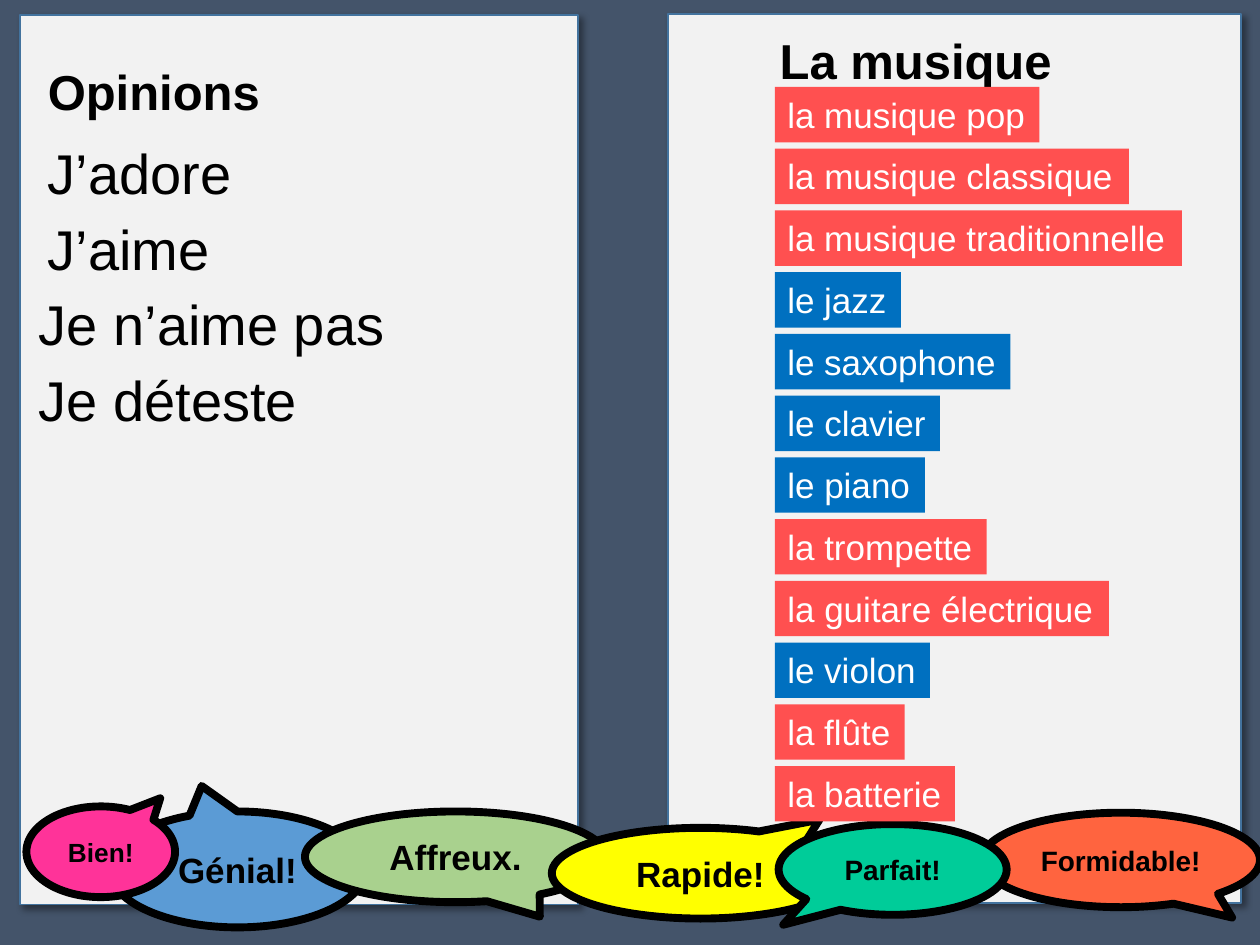
from lxml import etree
from pptx import Presentation
from pptx.dml.color import RGBColor
from pptx.enum.shapes import MSO_SHAPE
from pptx.enum.text import MSO_ANCHOR, MSO_AUTO_SIZE, PP_ALIGN
from pptx.oxml import parse_xml
from pptx.oxml.ns import nsdecls, qn
from pptx.util import Inches, Pt

RECT = MSO_SHAPE.RECTANGLE
BUBBLE = MSO_SHAPE.OVAL_CALLOUT
TOP, MIDDLE = MSO_ANCHOR.TOP, MSO_ANCHOR.MIDDLE
LEFT, CENTER = PP_ALIGN.LEFT, PP_ALIGN.CENTER
GROW = MSO_AUTO_SIZE.SHAPE_TO_FIT_TEXT

COLORS = {
    "back": "44546A", "panel": "F2F2F2", "edge": "43739E",
    "black": "000000", "white": "FFFFFF",
    "la": "FF5050", "le": "0070C0",
    "blue": "5B9BD5", "pink": "FF3399", "green": "A9D18E",
    "yellow": "FFFF00", "orange": "FF643F", "teal": "00CC99",
}


def color(name):
    return RGBColor.from_string(COLORS[name])


class Board:
    """Holds the style and the current slide."""

    font = "Arial"

    def __init__(self, slide):
        self.slide = slide
        self.shapes = slide.shapes
        fill = slide.background.fill
        fill.solid()
        fill.fore_color.rgb = color("back")

    def put_text(self, shape, text, size, ink="black", bold=False,
                 align=LEFT, anchor=TOP, wrap=True):
        frame = shape.text_frame
        frame.text = text
        frame.word_wrap = wrap
        frame.vertical_anchor = anchor
        para = frame.paragraphs[0]
        para.alignment = align
        font = para.runs[0].font
        font.name, font.size, font.bold = self.font, Pt(size), bold
        font.color.rgb = color(ink)
        return frame

    def shape(self, kind, box, fill, line=None, width=1):
        shape = self.shapes.add_shape(kind, *map(Inches, box))
        shape.shadow.inherit = False
        shape.fill.solid()
        shape.fill.fore_color.rgb = color(fill)
        if line:
            shape.line.color.rgb = color(line)
            shape.line.width = Pt(width)
        else:
            shape.line.fill.background()
        return shape

    def panel(self, *box):
        shape = self.shape(RECT, box, "panel", "edge")
        effects = shape._element.spPr.find(qn("a:effectLst"))
        shadow = etree.SubElement(
            effects, qn("a:outerShdw"), blurRad=str(Pt(4)), dist=str(Pt(3)),
            dir="2700000", algn="tl", rotWithShape="0")
        shadow.append(parse_xml(
            f'<a:srgbClr {nsdecls("a")} val="{COLORS["black"]}">'
            '<a:alpha val="40000"/></a:srgbClr>'))

    def title(self, text, *box):
        shape = self.shapes.title
        shape.left, shape.top, shape.width, shape.height = map(Inches, box)
        self.shapes._spTree.append(shape._element)  # in front of the panels
        self.put_text(shape, text, 28, bold=True).auto_size = GROW

    def label(self, text, box, size, bold=False):
        shape = self.shapes.add_textbox(*map(Inches, box))
        self.put_text(shape, text, size, bold=bold).auto_size = GROW

    def bubble(self, text, box, tip, fill, size):
        shape = self.shape(BUBBLE, box, fill, "black", 4.5)
        for i, value in enumerate(tip):
            shape.adjustments[i] = value
        self.put_text(shape, text, size, bold=True, align=CENTER,
                      anchor=MIDDLE)

    def tag(self, text, *box):
        shape = self.shape(RECT, box, text[:2])  # colour follows the article
        frame = self.put_text(shape, text, 20, "white", wrap=False)
        frame.auto_size = GROW


BUBBLES = [
    ("Génial!", (0.87, 6.44, 2.03, 0.92), (-0.14, -0.72), "blue", 20),
    ("Bien!", (0.21, 6.4, 1.18, 0.72), (0.4, -0.59), "pink", 15),
    ("Affreux.", (2.42, 6.44, 2.39, 0.72), (0.28, 0.66), "green", 20),
    ("Rapide!", (4.38, 6.57, 2.36, 0.72), (0.4, -0.59), "yellow", 20),
    ("Formidable!", (7.79, 6.45, 2.21, 0.75), (0.4, 0.61), "orange", 16),
    ("Parfait!", (6.18, 6.54, 1.81, 0.72), (-0.48, 0.61), "teal", 16),
]
# Text and width of each tag
TAGS = [
    ("la musique pop", 2.1), ("la musique classique", 2.81),
    ("la musique traditionnelle", 3.23), ("le jazz", 1),
    ("le saxophone", 1.87), ("le clavier", 1.31), ("le piano", 1.19),
    ("la trompette", 1.68), ("la guitare électrique", 2.65),
    ("le violon", 1.23), ("la flûte", 1.03), ("la batterie", 1.43),
]
# Text, left and width of each opinion
VIEWS = [
    ("J’adore", 0.28, 1.84), ("J’aime", 0.28, 1.84),
    ("Je n’aime pas", 0.21, 3.01), ("Je déteste", 0.21, 3.25),
]


def main():
    deck = Presentation()
    deck.slide_width, deck.slide_height = Inches(10), Inches(7.5)
    board = Board(deck.slides.add_slide(deck.slide_layouts[5]))

    # Panels and headings
    board.panel(0.16, 0.12, 4.43, 7.06)
    board.panel(5.3, 0.11, 4.55, 7.06)
    board.title("Opinions", 0.28, 0.44, 4.26, 0.57)
    board.label("La musique", (6.09, 0.19, 4.26, 0.57), 28, bold=True)

    # Speech bubbles along the bottom
    for bubble in BUBBLES:
        board.bubble(*bubble)

    # Music words
    for i, (text, width) in enumerate(TAGS):
        board.tag(text, 6.15, 0.69 + 0.49 * i, width, 0.44)

    # Opinions
    for i, (text, left, width) in enumerate(VIEWS):
        board.label(text, (left, 1.05 + 0.6 * i, width, 0.64), 32)

    deck.save("out.pptx")


if __name__ == "__main__":
    main()
